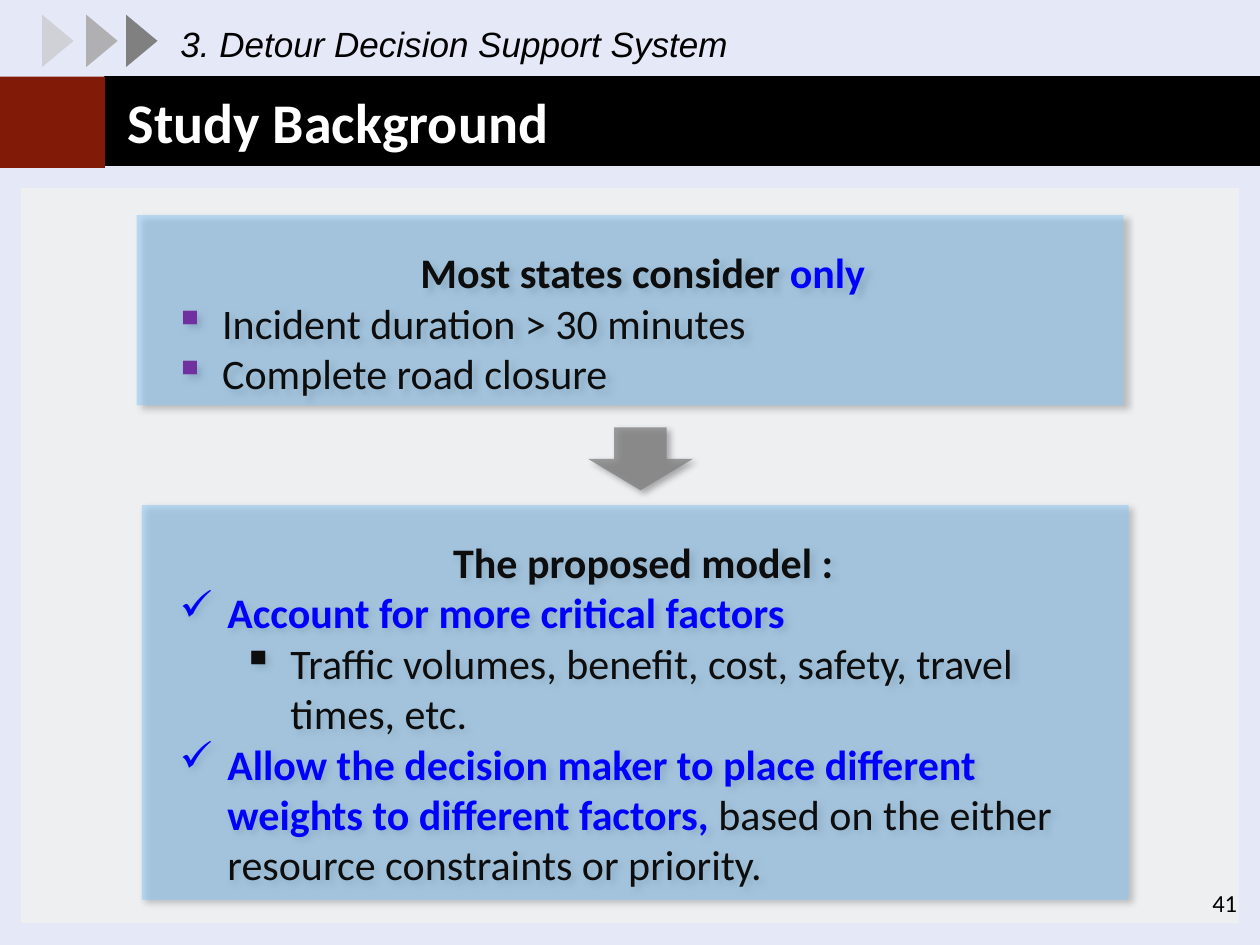
from lxml import etree
from pptx import Presentation, util as u
from pptx.dml.color import RGBColor
from pptx.enum import shapes, text
from pptx.oxml.ns import qn

THEME = {
    "page": "E5E8F7", "cream": "FFFFCC", "white": "FFFFFF", "black": "000000",
    "brick": "821A08", "card": "8CC9F7", "gray": "808080", "ink": "0D0D0D",
    "accent": "0000FF", "purple": "7030A0",
    "chevrons": [("BFBFBF", 56), ("A6A6A6", 84), ("808080", 100)],
    "title": 32, "body": 24, "section": 20, "number": 14,
    "font": "Calibri", "section font": "Arial",
}
KIND = shapes.MSO_SHAPE

deck = Presentation()
deck.slide_width, deck.slide_height = u.Inches(10), u.Inches(7.5)
CELL = deck.slide_width / 120  # grid of 120 columns by 90 rows
slide = deck.slides.add_slide(deck.slide_layouts[6])
slide.background.fill.solid()
slide.background.fill.fore_color.rgb = RGBColor.from_string(THEME["page"])


def block(kind, box, color, opacity=100, raised=False):
    """Place a filled shape on the grid, optionally see-through or with a shadow."""
    shape = slide.shapes.add_shape(kind, *(round(n * CELL) for n in box))
    shape.fill.solid()
    shape.fill.fore_color.rgb = RGBColor.from_string(color)
    properties = shape.element.spPr
    if opacity < 100:
        tint = properties.find(".//" + qn("a:srgbClr"))
        etree.SubElement(tint, qn("a:alpha"), val=str(opacity * 1000))
    shape.line.fill.background()
    shape.shadow.inherit = False
    if raised:
        shadow = etree.SubElement(
            properties.find(qn("a:effectLst")), qn("a:outerShdw"),
            blurRad=str(u.Pt(4)), dist=str(u.Pt(3)), dir="2700000",
            algn="tl", rotWithShape="0")
        shade = etree.SubElement(shadow, qn("a:srgbClr"), val=THEME["black"])
        etree.SubElement(shade, qn("a:alpha"), val="40000")
    return shape


def write(paragraph, runs, size, font=THEME["font"]):
    """Fill a paragraph with (wording, color, bold) runs."""
    paragraph.font.size, paragraph.font.name = u.Pt(size), font
    for wording, color, bold in runs:
        run = paragraph.add_run()
        run.text = wording
        run.font.bold = bold
        run.font.color.rgb = RGBColor.from_string(color)


# Content panel: two sheer layers
for layer in ("cream", "white"):
    block(KIND.RECTANGLE, (2, 17.9, 116, 70), THEME[layer], 20)

# Title band
band = block(KIND.RECTANGLE, (10, 7.3, 110, 8.5), THEME["black"])
band.line.color.rgb = RGBColor.from_string(THEME["black"])
band.line.width = u.Pt(0.75)
block(KIND.RECTANGLE, (0, 7.3, 10, 8.7), THEME["brick"])

# Chevrons, darkening to the right
for left, (color, opacity) in zip((3, 7.2, 11), THEME["chevrons"]):
    chevron = block(KIND.ISOSCELES_TRIANGLE, (left, 2.4, 5, 3), color, opacity)
    chevron.rotation = 90

# Title, section heading and page number
labels = [
    ("Study Background", (11, 7.8, 107, 7.4), "title", "white", "font"),
    ("3. Detour Decision Support System", (16, 1.6, 76, 5.3), "section", "black", "section font"),
    ("41", (91, 84, 28, 4.2), "number", "black", "font"),
]
for wording, box, role, color, font in labels:
    label = slide.shapes.add_textbox(*(round(n * CELL) for n in box)).text_frame
    label.word_wrap = True
    line = label.paragraphs[0]
    write(line, [(wording, THEME[color], role == "title")], THEME[role], THEME[font])
    line.font.italic = role == "section"
    if role == "title":
        label.vertical_anchor = text.MSO_ANCHOR.MIDDLE
    if role == "number":
        line.alignment = text.PP_ALIGN.RIGHT

# Cards: each line is (level, bullet, bullet color, runs); no bullet means heading
INK, ACCENT = THEME["ink"], THEME["accent"]
cards = [
    ((13, 20.5, 94, 18.1), [
        (0, None, None, [("Most states consider ", INK, True), ("only", ACCENT, True)]),
        (0, "▪", THEME["purple"], [("Incident duration > 30 minutes", INK, False)]),
        (0, "▪", THEME["purple"], [("Complete road closure", INK, False)]),
    ]),
    ((13.5, 48.1, 94, 37.6), [
        (0, None, None, [("The proposed model : ", INK, True)]),
        (0, "✓", None, [("Account for more critical factors", ACCENT, True)]),
        (1, "▪", None, [("Traffic volumes, benefit, cost, safety, travel times, etc.", INK, False)]),
        (0, "✓", None, [
            ("Allow the decision maker to place different weights to different factors, ", ACCENT, True),
            ("based on the either resource constraints or priority.", INK, False)]),
    ]),
]
for box, lines in cards:
    card = block(KIND.RECTANGLE, box, THEME["card"], 52, raised=True).text_frame
    card.word_wrap = True
    card.auto_size = text.MSO_AUTO_SIZE.SHAPE_TO_FIT_TEXT
    card.vertical_anchor = text.MSO_ANCHOR.TOP
    card.margin_left = u.Inches(0.3)
    for index, (level, bullet, bullet_color, runs) in enumerate(lines):
        line = card.add_paragraph() if index else card.paragraphs[0]
        write(line, runs, THEME["body"])
        if bullet is None:
            line.alignment = text.PP_ALIGN.CENTER
            line.line_spacing = 1.5
            continue
        line.alignment = text.PP_ALIGN.LEFT
        line.level = level
        layout = line._p.get_or_add_pPr()
        layout.set("marL", str(u.Inches(0.38 + 0.5 * level)))
        layout.set("indent", str(-u.Inches(0.38)))
        mark = etree.Element(qn("a:buChar"), char=bullet)
        layout.insert(0, mark)
        if bullet_color:
            tint = etree.Element(qn("a:buClr"))
            etree.SubElement(tint, qn("a:srgbClr"), val=bullet_color)
            mark.addprevious(tint)

# Arrow from current practice to the proposed model
block(KIND.DOWN_ARROW, (56, 40.7, 10, 6), THEME["gray"], 76, raised=True)

deck.save("out.pptx")
